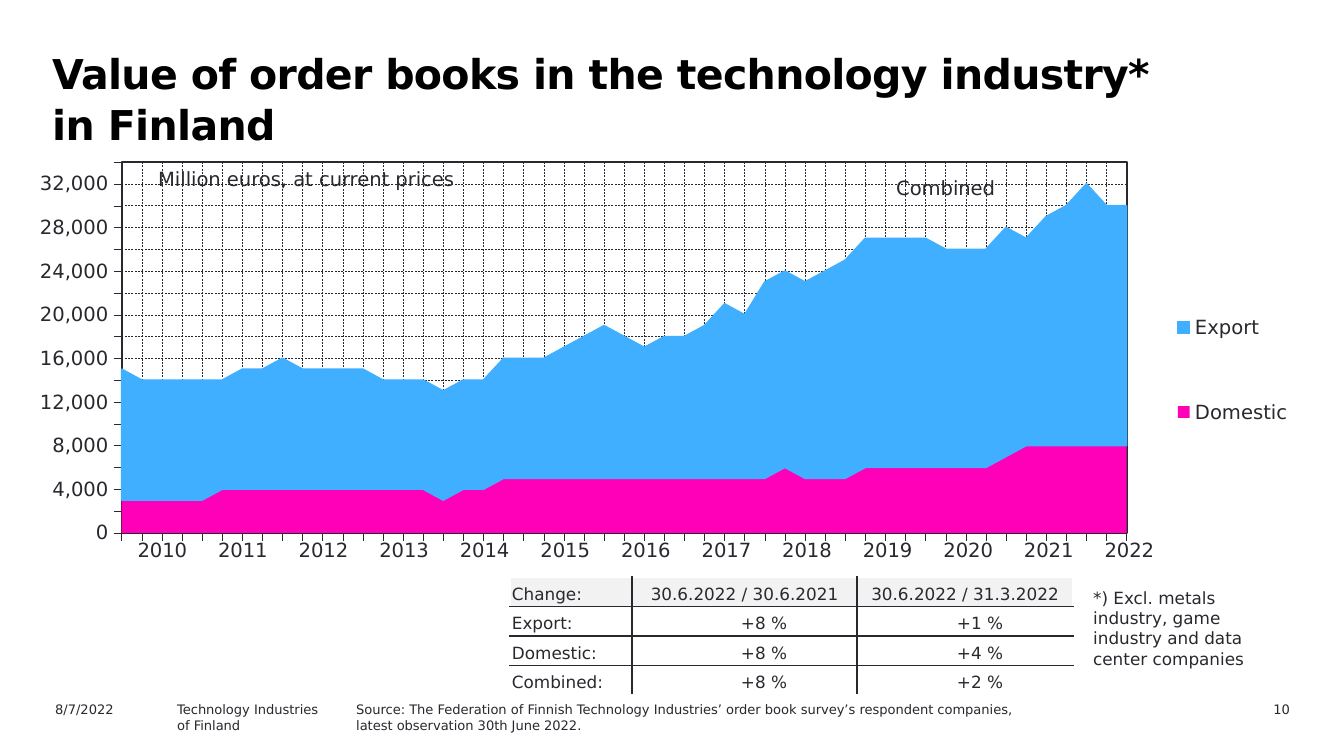
from pptx import Presentation
from pptx.chart.data import CategoryChartData
from pptx.dml.color import RGBColor
from pptx.enum.chart import XL_CHART_TYPE, XL_LEGEND_POSITION, XL_TICK_LABEL_POSITION, XL_TICK_MARK
from pptx.enum.dml import MSO_LINE
from pptx.enum.text import MSO_ANCHOR, PP_ALIGN
from pptx.oxml import parse_xml
from pptx.oxml.ns import nsdecls, qn
from pptx.util import Emu, Pt

LEFT, CENTER, RIGHT = PP_ALIGN.LEFT, PP_ALIGN.CENTER, PP_ALIGN.RIGHT
BOTTOM, TOP = MSO_ANCHOR.BOTTOM, MSO_ANCHOR.TOP
OUTSIDE, NO_LABELS = XL_TICK_MARK.OUTSIDE, XL_TICK_LABEL_POSITION.NONE
AREA, LEGEND_RIGHT, DASH = XL_CHART_TYPE.AREA_STACKED, XL_LEGEND_POSITION.RIGHT, MSO_LINE.DASH

THEME = {
    "font": "DejaVu Sans",
    "ink": "29282E", "title": "000000", "white": "FFFFFF", "header": "F2F2F2",
    "domestic": "FF00B8", "export": "40AFFF",
    "title_size": 22, "label_size": 10.5, "table_size": 9, "foot_size": 7,
}
NO_STYLE = "{2D5ABB26-0587-4C30-8999-92F81FD0307C}"
SLIDE_W, SLIDE_H = 1344, 756

# Content
TITLE = "Value of order books in the technology industry* in Finland"
# lines, (left, top, width, height), size key, alignment
LABELS = [
    (["Million euros, at current prices"], (145, 160, 328, 36), "label_size", LEFT),
    (["Combined"], (883, 169, 142, 36), "label_size", LEFT),
    (["*) Excl. metals industry, game industry and data center companies"],
     (1080, 581, 223, 95), "table_size", LEFT),
    (["8/7/2022"], (42, 695, 134, 24), "foot_size", LEFT),
    (["Technology Industries", "of Finland"], (164, 695, 242, 24), "foot_size", LEFT),
    (["Source: The Federation of Finnish Technology Industries’ order book survey’s "
      "respondent companies, latest observation 30th June 2022."],
     (343, 695, 699, 54), "foot_size", LEFT),
    (["10"], (1177, 695, 126, 24), "foot_size", RIGHT),
]
# Quarterly order books, million euros
SERIES = {
    "Domestic": [
        3000, 3000, 3000, 3000, 3000, 4000, 4000, 4000, 4000, 4000,
        4000, 4000, 4000, 4000, 4000, 4000, 3000, 4000, 4000, 5000,
        5000, 5000, 5000, 5000, 5000, 5000, 5000, 5000, 5000, 5000,
        5000, 5000, 5000, 6000, 5000, 5000, 5000, 6000, 6000, 6000,
        6000, 6000, 6000, 6000, 7000, 8000, 8000, 8000, 8000, 8000, 8000],
    "Export": [
        12000, 11000, 11000, 11000, 11000, 10000, 11000, 11000, 12000, 11000,
        11000, 11000, 11000, 10000, 10000, 10000, 10000, 10000, 10000, 11000,
        11000, 11000, 12000, 13000, 14000, 13000, 12000, 13000, 13000, 14000,
        16000, 15000, 18000, 18000, 18000, 19000, 20000, 21000, 21000, 21000,
        21000, 20000, 20000, 20000, 21000, 19000, 21000, 22000, 24000, 22000, 22000],
}
YEARS = [str(year) for year in range(2010, 2023)]
CHANGES = [
    ["Change:", "30.6.2022 / 30.6.2021", "30.6.2022 / 31.3.2022"],
    ["Export:", "+8 %", "+1 %"],
    ["Domestic:", "+8 %", "+4 %"],
    ["Combined:", "+8 %", "+2 %"],
]


def px(n):
    return Emu(round(n * 914400 / 134.4))


def color(key):
    return RGBColor.from_string(THEME[key])


def set_font(font, size, ink="ink", **extra):
    values = {"name": THEME["font"], "size": Pt(THEME[size]), "bold": False, **extra}
    for name, value in values.items():
        setattr(font, name, value)
    font.color.rgb = color(ink)


def set_line(line, width, key="ink"):
    line.color.rgb = color(key)
    line.width = Pt(width)


def write(tf, lines, size, align=LEFT, **font):
    tf.word_wrap = True
    for i, line in enumerate(lines):
        p = tf.add_paragraph() if i else tf.paragraphs[0]
        p.alignment = align
        r = p.add_run()
        r.text = line
        set_font(r.font, size, **font)


def add_text(slide, lines, box, size, align=LEFT, **font):
    tf = slide.shapes.add_textbox(*map(px, box)).text_frame
    write(tf, lines, size, align, **font)
    return tf


def add_table(slide, rows, left, top, widths, height):
    tbl = slide.shapes.add_table(len(rows), len(widths), px(left), px(top),
                                 px(sum(widths)), px(height * len(rows))).table
    tbl.first_row = tbl.horz_banding = False
    tbl._tbl.tblPr.find(qn("a:tableStyleId")).text = NO_STYLE
    for col, width in zip(tbl.columns, widths):
        col.width = px(width)
    for row in tbl.rows:
        row.height = px(height)
    return tbl


def set_borders(cell, inner):
    tc_pr = cell._tc.get_or_add_tcPr()
    for i, (side, is_inner) in enumerate(inner.items()):
        key = "ink" if is_inner else "white"
        tc_pr.insert(i, parse_xml(
            f'<a:{side} {nsdecls("a")} w="12700"><a:solidFill>'
            f'<a:srgbClr val="{THEME[key]}"/></a:solidFill></a:{side}>'))


def set_layout(parent, index, x, y, w, h, target=""):
    for old in parent.findall(qn("c:layout")):
        parent.remove(old)
    parent.insert(index, parse_xml(
        f'<c:layout {nsdecls("c")}><c:manualLayout>{target}'
        '<c:xMode val="edge"/><c:yMode val="edge"/>'
        f'<c:x val="{x}"/><c:y val="{y}"/><c:w val="{w}"/><c:h val="{h}"/>'
        '</c:manualLayout></c:layout>'))


def add_order_chart(slide):
    data = CategoryChartData(number_format="#,##0")
    data.categories = [str(i + 1) for i in range(len(SERIES["Export"]))]
    for name, values in SERIES.items():
        data.add_series(name, values)
    chart = slide.shapes.add_chart(AREA, px(26), px(150), px(1277), px(419), data).chart
    chart.has_title = False
    set_font(chart.font, "label_size")
    chart.plots[0].vary_by_categories = False
    for s in chart.plots[0].series:
        s.format.fill.solid()
        s.format.fill.fore_color.rgb = color(s.name.lower())
    set_line(s.format.line, 0.88, "export")

    # Axes and grid
    for axis in (chart.category_axis, chart.value_axis):
        axis.has_major_gridlines = True
        axis.major_tick_mark = OUTSIDE
        set_line(axis.format.line, 0.22)
        grid = axis.major_gridlines.format.line
        set_line(grid, 0.25)
        grid.dash_style = DASH
        set_font(axis.tick_labels.font, "label_size")
    chart.category_axis.tick_label_position = NO_LABELS
    axis = chart.value_axis
    axis.minimum_scale, axis.maximum_scale, axis.major_unit = 0, 34000, 2000
    axis.tick_labels.number_format = "#,##0"
    axis.tick_labels.number_format_is_linked = False
    axis._element.find(qn("c:crossBetween")).set("val", "midCat")

    # Legend and framed plot area
    chart.has_legend = True
    legend = chart.legend
    legend.position, legend.include_in_layout = LEGEND_RIGHT, False
    set_font(legend.font, "label_size")
    set_layout(legend._element, 1, 0.89, 0.25, 0.11, 0.55)
    plot_area = chart._chartSpace.chart.plotArea
    set_layout(plot_area, 0, 0.075, 0.029, 0.787, 0.885, '<c:layoutTarget val="inner"/>')
    plot_area.append(parse_xml(
        f'<c:spPr {nsdecls("c", "a")}><a:noFill/><a:ln w="12700"><a:solidFill>'
        f'<a:srgbClr val="{THEME["ink"]}"/></a:solidFill></a:ln></c:spPr>'))


def add_change_table(slide):
    tbl = add_table(slide, CHANGES, 510, 577, [122, 225, 216], 29.5)
    last_row, last_col = len(CHANGES) - 1, len(CHANGES[0]) - 1
    for i, row in enumerate(CHANGES):
        for j, value in enumerate(row):
            cell = tbl.cell(i, j)
            number = i > 0 and j > 0
            margins = {"left": 2, "right": 70 if number else 2, "top": 2, "bottom": 2}
            for side, gap in margins.items():
                setattr(cell, f"margin_{side}", px(gap))
            cell.vertical_anchor = BOTTOM
            align = RIGHT if number else CENTER if j else LEFT
            write(cell.text_frame, [value], "table_size", align)
            cell.fill.solid()
            cell.fill.fore_color.rgb = color("white" if i else "header")
            set_borders(cell, {"lnL": j > 0, "lnR": j < last_col,
                               "lnT": i > 0, "lnB": i < last_row})


def add_year_labels(slide):
    tbl = add_table(slide, [YEARS], 122, 533, [80.6] * len(YEARS), 42)
    for cell, year in zip(tbl.rows[0].cells, YEARS):
        cell.fill.background()
        cell.vertical_anchor = TOP
        write(cell.text_frame, [year], "label_size", CENTER)


def main():
    prs = Presentation()
    prs.slide_width, prs.slide_height = px(SLIDE_W), px(SLIDE_H)
    slide = prs.slides.add_slide(prs.slide_layouts[6])

    # Title
    tf = add_text(slide, [TITLE], (39, 41, 1172, 95), "title_size", ink="title", bold=True)
    tf.paragraphs[0].line_spacing = Pt(27)
    tf.paragraphs[0].runs[0].font._element.set("spc", "-34")

    # Chart, tables and labels
    add_order_chart(slide)
    add_change_table(slide)
    add_year_labels(slide)
    for lines, box, size, align in LABELS:
        add_text(slide, lines, box, size, align)
    prs.save("out.pptx")


if __name__ == "__main__":
    main()
